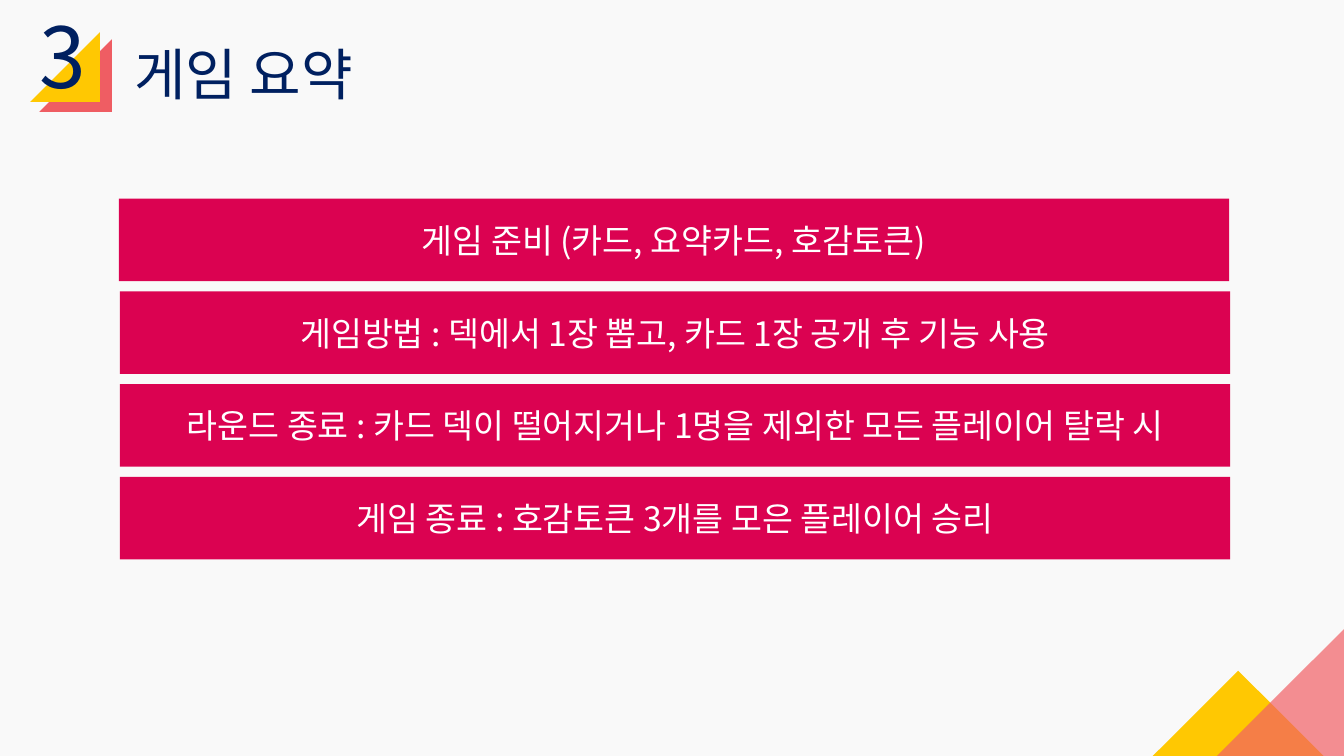
"""Build the game summary slide with four rule bars and triangle accents."""
from dataclasses import dataclass

from lxml import etree
from pptx import Presentation
from pptx import util as u
from pptx.dml.color import RGBColor
from pptx.enum import shapes, text
from pptx.oxml.ns import qn

FONT = "Noto Sans CJK KR"
NAVY, PINK, GOLD, WHITE = "002060", "DB0251", "FFC802", "FFFFFF"


@dataclass
class Corner:
    left: float
    top: float
    size: float
    turn: int
    color: str
    alpha: int = 100


@dataclass
class Bar:
    left: float
    words: str


CORNERS = [
    Corner(0.39, 0.39, 0.72, 270, "EB1C24", 70),
    Corner(0.3, 0.32, 0.69, 270, GOLD),
    Corner(11.66, 6.91, 1.24, 135, GOLD),
    Corner(12.04, 6.24, 1.29, 270, "F16065", 70),
]
BARS = [
    Bar(1.18, "게임 준비 (카드, 요약카드, 호감토큰)"),
    Bar(1.19, "게임방법 : 덱에서 1장 뽑고, 카드 1장 공개 후 기능 사용"),
    Bar(1.19, "라운드 종료 : 카드 덱이 떨어지거나 1명을 제외한 모든 플레이어 탈락 시"),
    Bar(1.19, "게임 종료 : 호감토큰 3개를 모은 플레이어 승리"),
]
BAR_TOP, BAR_STEP = 1.97, 0.92


def paint(fill, color: str, alpha: int = 100) -> None:
    fill.solid()
    fill.fore_color.rgb = RGBColor.from_string(color)
    if alpha < 100:
        tone = fill._xPr.find(qn("a:solidFill"))[0]
        etree.SubElement(tone, qn("a:alpha"), val=str(alpha * 1000))


def write(shape, words: str, size: int, color: str, align, anchor) -> None:
    frame = shape.text_frame
    frame.word_wrap = True
    frame.auto_size = text.MSO_AUTO_SIZE.NONE
    frame.vertical_anchor = anchor
    line = frame.paragraphs[0]
    line.alignment = align
    run = line.add_run()
    run.text = words
    run.font.size = u.Pt(size)
    run.font.name = FONT
    paint(run.font.fill, color)
    etree.SubElement(run.font._element, qn("a:ea"), typeface=FONT)


def draw(slide, kind, box: tuple[float, ...], color: str, alpha: int = 100):
    shape = slide.shapes.add_shape(kind, *map(u.Inches, box))
    shape.shadow.inherit = False
    shape.line.fill.background()
    paint(shape.fill, color, alpha)
    return shape


def main() -> None:
    deck = Presentation()
    deck.slide_width, deck.slide_height = u.Inches(13.33), u.Inches(7.5)
    slide = deck.slides.add_slide(deck.slide_layouts[5])
    paint(slide.background.fill, "F9F9F9")
    kinds = shapes.MSO_SHAPE
    left, mid = text.PP_ALIGN.LEFT, text.PP_ALIGN.CENTER
    top, center = text.MSO_ANCHOR.TOP, text.MSO_ANCHOR.MIDDLE

    for item in CORNERS:
        box = (item.left, item.top, item.size, item.size)
        shape = draw(slide, kinds.RIGHT_TRIANGLE, box, item.color, item.alpha)
        shape.rotation = item.turn

    digit = slide.shapes.add_textbox(*map(u.Inches, (0.29, 0, 0.94, 1.11)))
    write(digit, "3", 60, NAVY, left, top)

    title = slide.shapes.title
    title.left, title.top = u.Inches(1.23), u.Inches(0.34)
    title.width, title.height = u.Inches(5.88), u.Inches(0.77)
    write(title, "게임 요약", 40, NAVY, left, top)

    for row, bar in enumerate(BARS):
        box = (bar.left, BAR_TOP + row * BAR_STEP, 11.01, 0.82)
        shape = draw(slide, kinds.RECTANGLE, box, PINK)
        write(shape, bar.words, 24, WHITE, mid, center)

    deck.save("out.pptx")


if __name__ == "__main__":
    main()
